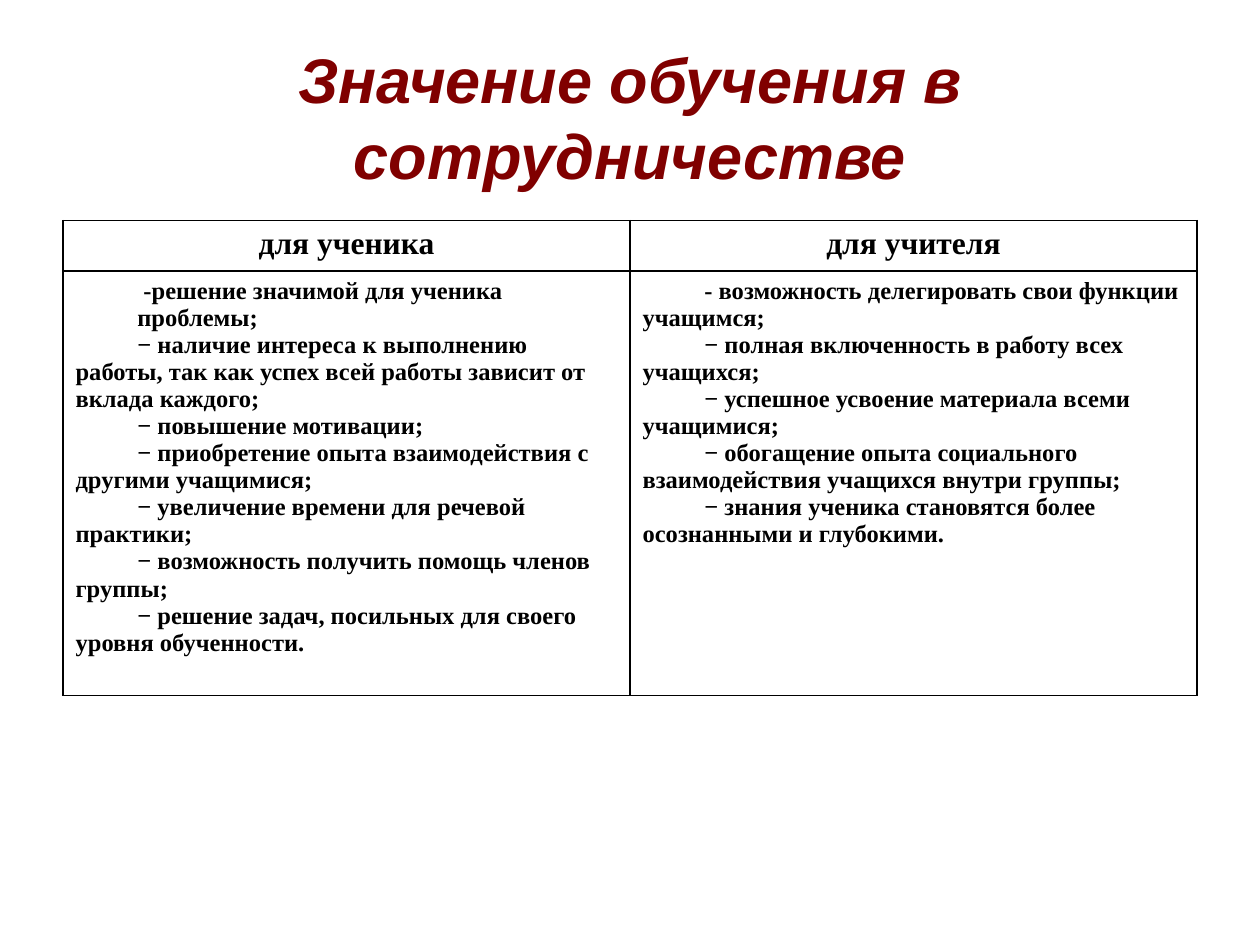
from lxml.etree import SubElement
from pptx import Presentation
from pptx.dml.color import RGBColor
from pptx.enum.text import MSO_ANCHOR, PP_ALIGN
from pptx.oxml.ns import qn
from pptx.util import Inches, Pt

TITLE = "Значение обучения в сотрудничестве"
COLUMNS = {
    "для ученика": [
        " -решение значимой для ученика",
        "проблемы;",
        "− наличие интереса к выполнению работы, так как успех всей работы зависит от вклада каждого;",
        "− повышение мотивации;",
        "− приобретение опыта взаимодействия с другими учащимися;",
        "− увеличение времени для речевой практики;",
        "− возможность получить помощь членов группы;",
        "− решение задач, посильных для своего уровня обученности.",
    ],
    "для учителя": [
        "- возможность делегировать свои функции учащимся;",
        "− полная включенность в работу всех учащихся;",
        "− успешное усвоение материала всеми учащимися;",
        "− обогащение опыта социального взаимодействия учащихся внутри группы;",
        "− знания ученика становятся более осознанными и глубокими.",
    ],
}
ROW_HEIGHTS = [Inches(0.38), Inches(3.36)]
BLACK = "000000"


def rgb(value):
    return RGBColor.from_string(value)


def add_run(p, text, font, size, color, italic=False):
    r = p.add_run()
    r.text = text
    r.font.name, r.font.size = font, Pt(size)
    r.font.bold, r.font.italic = True, italic
    r.font.color.rgb = rgb(color)


def add_title(s, left, top, width, height):
    tf = s.shapes.add_textbox(left, top, width, height).text_frame
    tf.word_wrap = True
    tf.vertical_anchor = MSO_ANCHOR.MIDDLE
    p = tf.paragraphs[0]
    p.alignment = PP_ALIGN.CENTER
    add_run(p, TITLE, "Arial", 36, "800000", italic=True)


def set_borders(cell, color, width):
    tc_pr = cell._tc.get_or_add_tcPr()
    for side in ("lnL", "lnR", "lnT", "lnB"):
        ln = SubElement(tc_pr, qn(f"a:{side}"), w=str(Pt(width)))
        fill = SubElement(ln, qn("a:solidFill"))
        SubElement(fill, qn("a:srgbClr"), val=color)


def fill_cell(cell, lines, size, align, indent=0):
    set_borders(cell, BLACK, 0.75)
    cell.fill.background()
    tf = cell.text_frame
    for i, line in enumerate(lines):
        p = tf.add_paragraph() if i else tf.paragraphs[0]
        p.alignment = align
        p_pr = p._p.get_or_add_pPr()
        p_pr.set("marL", "0")
        p_pr.set("indent", str(Inches(indent)))
        add_run(p, line, "Times New Roman", size, BLACK)


def add_comparison(s, left, top, width):
    table = s.shapes.add_table(
        len(ROW_HEIGHTS), len(COLUMNS), left, top, width, sum(ROW_HEIGHTS)
    ).table
    table.first_row = table.horz_banding = False
    for row, height in zip(table.rows, ROW_HEIGHTS):
        row.height = height
    for col, (heading, points) in enumerate(COLUMNS.items()):
        fill_cell(table.cell(0, col), [heading], 18, PP_ALIGN.CENTER)
        fill_cell(table.cell(1, col), points, 14, PP_ALIGN.LEFT, indent=0.49)


def main():
    prs = Presentation()
    prs.slide_width, prs.slide_height = Inches(10), Inches(7.5)
    s = prs.slides.add_slide(prs.slide_layouts[6])
    margin = Inches(0.5)
    width = prs.slide_width - 2 * margin
    add_title(s, margin, Inches(0.3), width, Inches(1.25))
    add_comparison(s, margin, Inches(1.75), width)
    prs.save("out.pptx")


if __name__ == "__main__":
    main()
